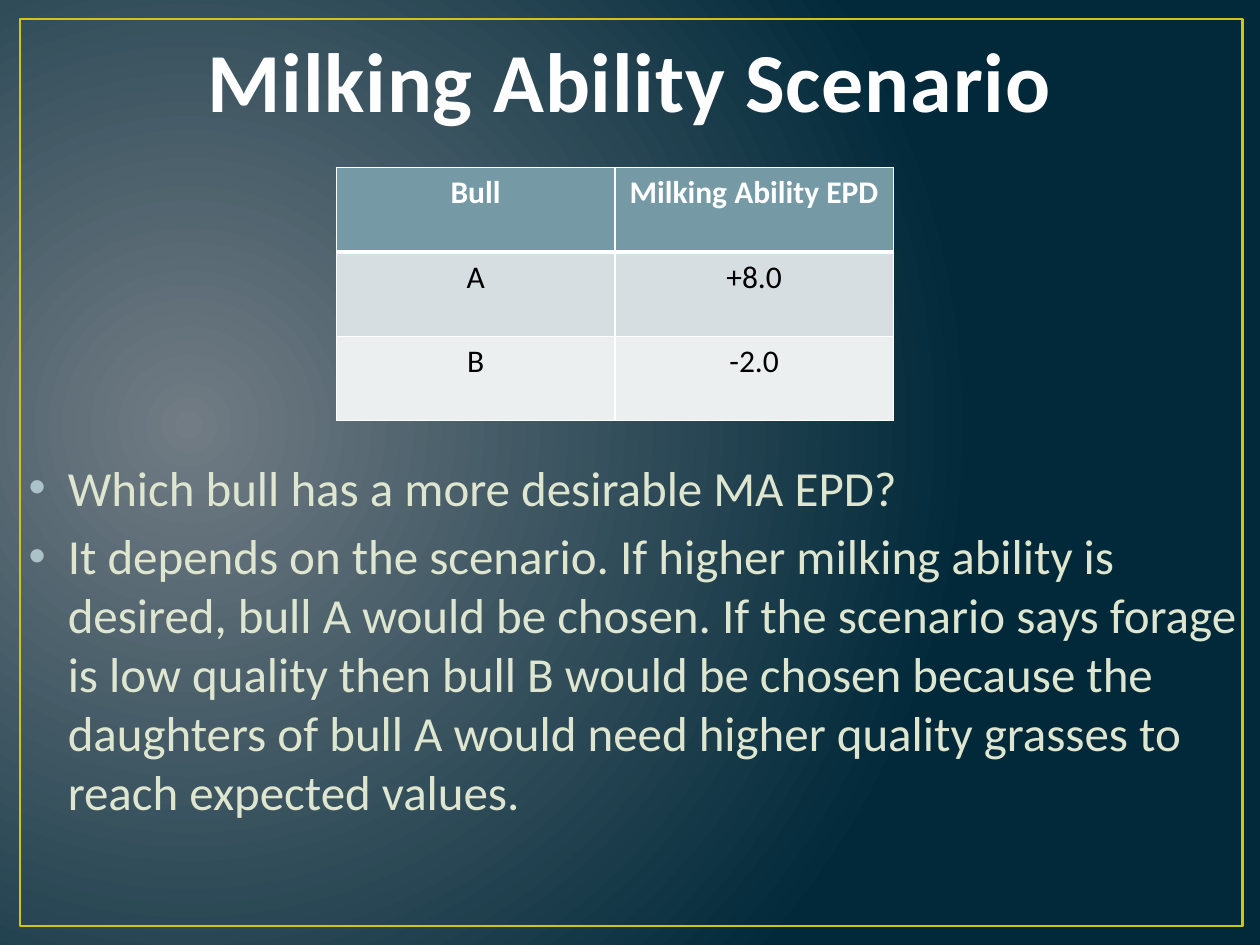
"""Build the Milking Ability Scenario slide."""
from pptx import Presentation
from pptx.dml.color import RGBColor
from pptx.enum.shapes import MSO_SHAPE
from pptx.enum.text import MSO_ANCHOR, MSO_AUTO_SIZE, PP_ALIGN
from pptx.oxml import parse_xml
from pptx.oxml.ns import nsdecls, qn
from pptx.util import Inches, Pt

TITLE = "Milking Ability Scenario"
ROWS = [("Bull", "Milking Ability EPD"), ("A", "+8.0"), ("B", "-2.0")]
BULLETS = [
    "Which bull has a more desirable MA EPD?",
    "It depends on the scenario. If higher milking ability is desired, bull A "
    "would be chosen. If the scenario says forage is low quality then bull B "
    "would be chosen because the daughters of bull A would need higher quality "
    "grasses to reach expected values.",
]

GLOW, NAVY = RGBColor(0x71, 0x7C, 0x84), RGBColor(0x01, 0x29, 0x3A)
GOLD, OFF_WHITE = RGBColor(0xCF, 0xC6, 0x0D), RGBColor(0xFE, 0xFE, 0xFE)
WHITE, BLACK = RGBColor(0xFF, 0xFF, 0xFF), RGBColor(0, 0, 0)
CREAM, MIST = RGBColor(0xDF, 0xE6, 0xD0), RGBColor(0xAC, 0xC2, 0xC9)
ROW_FILLS = [RGBColor(0x75, 0x9A, 0xA5), RGBColor(0xD6, 0xDE, 0xE1), RGBColor(0xEC, 0xEF, 0xF0)]

FRAME_BOX = (0.16, 0.15, 9.7, 7.2)
TITLE_BOX = (0.5, -0.17, 9, 1.25)
TABLE_BOX = (2.67, 1.33, 4.42, 2.01)
BODY_BOX = (0.13, 3.58, 9.83, 3.42)

TITLE_FONT = {"name": "Calibri", "size": Pt(48), "bold": True}
HEAD_FONT = {"name": "Calibri", "size": Pt(18), "bold": True}
CELL_FONT = {**HEAD_FONT, "bold": False}
BODY_FONT = {"name": "Calibri", "size": Pt(28), "bold": False}


def inches(box):
    return [Inches(v) for v in box]


def write(p, text, fmt, color, align=PP_ALIGN.LEFT):
    p.alignment = align
    r = p.add_run()
    r.text = text
    for key, value in fmt.items():
        setattr(r.font, key, value)
    r.font.color.rgb = color
    return r


def paint_background(s):
    fill = s.background.fill
    fill.gradient()
    for stop, color, pos in zip(fill.gradient_stops, (GLOW, NAVY), (0, 1)):
        stop.color.rgb = color
        stop.position = pos
    grad = s.element.find(".//" + qn("a:gradFill"))
    grad.replace(grad.find(qn("a:lin")), parse_xml(
        f'<a:path {nsdecls("a")} path="circle">'
        '<a:fillToRect l="15000" t="50000" r="85000" b="60000"/></a:path>'))


def add_frame(s):
    sp = s.shapes.add_shape(MSO_SHAPE.RECTANGLE, *inches(FRAME_BOX))
    sp.shadow.inherit = False
    sp.fill.background()
    sp.line.color.rgb = GOLD
    sp.line.width = Pt(1.5)


def set_title(s):
    sp = s.shapes.title
    sp.left, sp.top, sp.width, sp.height = inches(TITLE_BOX)
    tf = sp.text_frame
    tf.vertical_anchor = MSO_ANCHOR.BOTTOM
    tf.auto_size = MSO_AUTO_SIZE.NONE
    r = write(tf.paragraphs[0], TITLE, TITLE_FONT, OFF_WHITE, PP_ALIGN.CENTER)
    r.font._element.set("spc", "50")


def set_borders(cell, widths):
    tcPr = cell._tc.get_or_add_tcPr()
    for side, width in widths.items():
        tcPr.append(parse_xml(
            f'<a:ln{side} {nsdecls("a")} w="{Pt(width)}"><a:solidFill>'
            f'<a:srgbClr val="{WHITE}"/></a:solidFill></a:ln{side}>'))


def add_bull_table(s):
    shape = s.shapes.add_table(len(ROWS), len(ROWS[0]), *inches(TABLE_BOX))
    for i, row in enumerate(ROWS):
        fmt, color = (CELL_FONT, BLACK) if i else (HEAD_FONT, WHITE)
        for j, text in enumerate(row):
            cell = shape.table.cell(i, j)
            set_borders(cell, {"L": 1, "R": 1, "T": 3 if i == 1 else 1, "B": 1 if i else 3})
            cell.fill.solid()
            cell.fill.fore_color.rgb = ROW_FILLS[i]
            write(cell.text_frame.paragraphs[0], text, fmt, color, PP_ALIGN.CENTER)


def add_bullets(s):
    tf = s.shapes.add_textbox(*inches(BODY_BOX)).text_frame
    tf.word_wrap = True
    for i, text in enumerate(BULLETS):
        p = tf.add_paragraph() if i else tf.paragraphs[0]
        write(p, text, BODY_FONT, CREAM)
        p.space_before = Pt(5.6)
        pPr = p._p.get_or_add_pPr()
        pPr.set("marL", str(Inches(0.31)))
        pPr.set("indent", str(-Inches(0.31)))
        for xml in (f'<a:buClr {nsdecls("a")}><a:srgbClr val="{MIST}"/></a:buClr>',
                    f'<a:buFont {nsdecls("a")} typeface="Arial"/>',
                    f'<a:buChar {nsdecls("a")} char="•"/>'):
            pPr.append(parse_xml(xml))


def main():
    prs = Presentation()
    prs.slide_width, prs.slide_height = Inches(10), Inches(7.5)
    s = prs.slides.add_slide(prs.slide_layouts[5])
    paint_background(s)
    add_frame(s)
    set_title(s)
    add_bull_table(s)
    add_bullets(s)
    prs.save("out.pptx")


if __name__ == "__main__":
    main()
